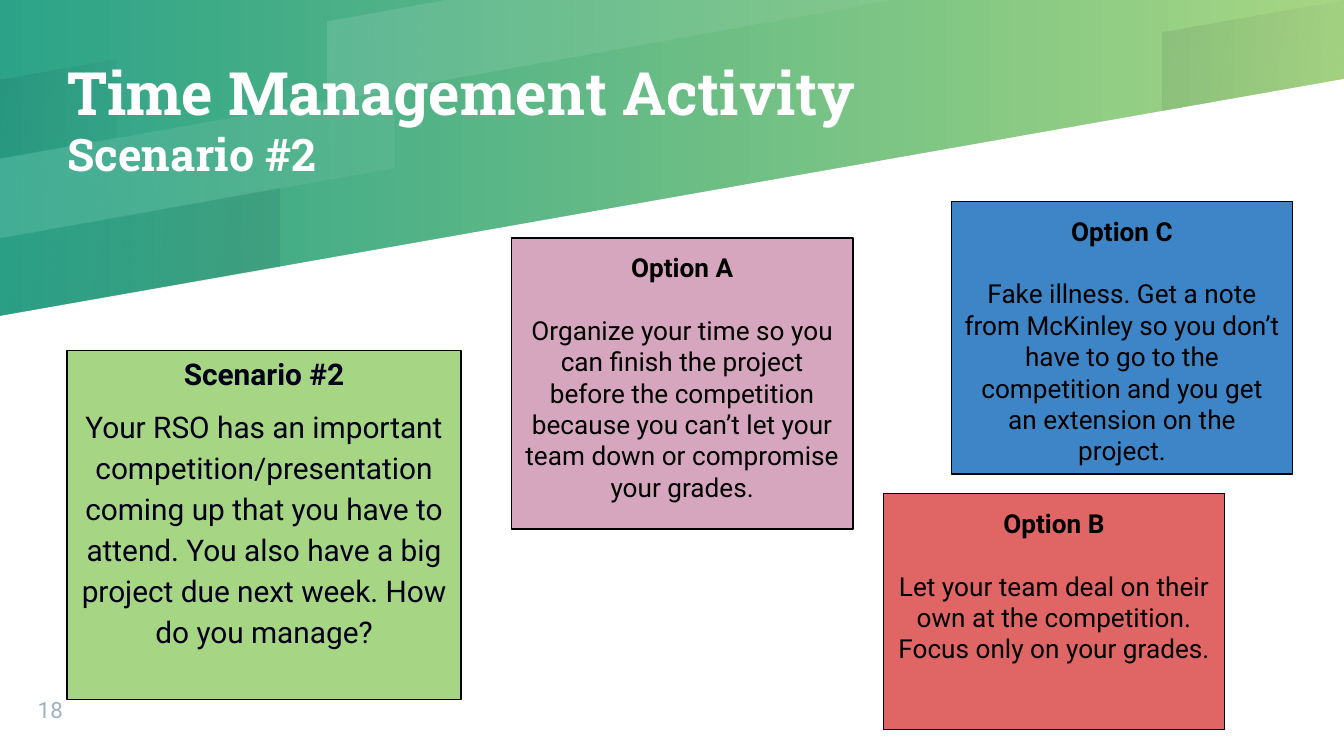
from lxml import etree
from pptx import Presentation
from pptx.dml.color import RGBColor
from pptx.enum.shapes import MSO_SHAPE
from pptx.enum.text import MSO_ANCHOR, PP_ALIGN
from pptx.oxml.ns import qn
from pptx.util import Pt

RECTANGLE = MSO_SHAPE.RECTANGLE
TOP, MIDDLE, BOTTOM = MSO_ANCHOR.TOP, MSO_ANCHOR.MIDDLE, MSO_ANCHOR.BOTTOM
LEFT, CENTER = PP_ALIGN.LEFT, PP_ALIGN.CENTER

WIDTH, HEIGHT = 720, 405
COLORS = {
    "teal": "2CA388", "lime": "A6D683", "white": "FFFFFF", "ink": "00001A",
    "black": "000000", "number": "9EB3C2",
    "pink": "D5A6BD", "red": "E06666", "blue": "3D85C6",
}

TITLE = [("Time Management Activity", 32), ("Scenario #2", 24)]
PAGE_NUMBER = "18"
SCENARIO = (
    "Scenario #2",
    "Your RSO has an important competition/presentation coming up that you have to "
    "attend. You also have a big project due next week. How do you manage?",
)
OPTIONS = [
    ("Option A",
     "Organize your time so you can finish the project before the competition because "
     "you can’t let your team down or compromise your grades.",
     "pink", (274, 127.5, 183, 156)),
    ("Option B",
     "Let your team deal on their own at the competition. Focus only on your grades.",
     "red", (473.2, 264.5, 183, 126.5)),
    ("Option C",
     "Fake illness. Get a note from McKinley so you don’t have to go to the competition "
     "and you get an extension on the project.",
     "blue", (509.6, 108, 183, 146)),
]

STEP = 42.33
RUN = 240
LEVELS = 4
BANDS = [
    (175.5, WIDTH, 3, "white", (12, 5)),
    (0, 62.5, 3, "ink", (8, 2)),
    (0, 149.5, 1, "ink", (2, 8)),
    (623, WIDTH, 1, "ink", (8, 2)),
    (0, 211.5, 2, "white", (12, 5)),
]


def rgb(name):
    return RGBColor.from_string(COLORS[name])


def slope_point(x, level):
    x = min(x, RUN * (LEVELS - level))
    return x, STEP * (LEVELS - level - x / RUN)


def add_outline(slide, points):
    corners = [(Pt(x), Pt(y)) for x, y in points]
    builder = slide.shapes.build_freeform(*corners[0])
    builder.add_line_segments(corners[1:], close=True)
    outline = builder.convert_to_shape()
    outline.shadow.inherit = False
    outline.line.fill.background()
    return outline


def add_band(slide, left, right, level, color, opacities):
    band = add_outline(slide, [
        slope_point(left, level), slope_point(left, level - 1),
        slope_point(right, level - 1), slope_point(right, level),
    ])
    band.fill.gradient()
    band.fill.gradient_angle = 350
    for stop in band.fill.gradient_stops:
        stop.color.rgb = rgb(color)
    stop_colors = band._element.spPr.iter(qn("a:srgbClr"))
    for stop_color, opacity in zip(stop_colors, opacities):
        etree.SubElement(stop_color, qn("a:alpha"), val=str(opacity * 1000))


def set_frame(frame, anchor, inset=0):
    settings = {"word_wrap": True, "vertical_anchor": anchor}
    settings.update({f"margin_{side}": Pt(inset)
                     for side in ("left", "top", "right", "bottom")})
    for key, value in settings.items():
        setattr(frame, key, value)


def write(frame, lines, color, align, spacing=None, gap=0, shadow=False):
    for index, (text, size, bold, font_name) in enumerate(lines):
        paragraph = frame.add_paragraph() if index else frame.paragraphs[0]
        layout = {"alignment": align, "line_spacing": spacing,
                  "space_before": Pt(gap if index else 0)}
        for key, value in layout.items():
            setattr(paragraph, key, value)
        run = paragraph.add_run()
        run.text = text
        run.font.color.rgb = rgb(color)
        if shadow:
            add_text_shadow(run)
        for key, value in {"size": Pt(size), "bold": bold, "name": font_name}.items():
            setattr(run.font, key, value)


def add_text_shadow(run):
    effects = etree.SubElement(run.font._element, qn("a:effectLst"))
    cast = etree.SubElement(effects, qn("a:outerShdw"), blurRad="38100",
                            dist="19050", dir="2700000", algn="tl")
    shade = etree.SubElement(cast, qn("a:srgbClr"), val=COLORS["black"])
    etree.SubElement(shade, qn("a:alpha"), val="40000")


def add_label(slide, box, anchor, lines, color, shadow=False):
    label = slide.shapes.add_textbox(*map(Pt, box))
    set_frame(label.text_frame, anchor)
    write(label.text_frame, lines, color, LEFT, shadow=shadow)


def add_card(slide, box, fill, heading, body, size, color, inset, spacing, gap):
    card = slide.shapes.add_shape(RECTANGLE, *map(Pt, box))
    card.shadow.inherit = False
    card.fill.solid()
    card.fill.fore_color.rgb = rgb(fill)
    card.line.color.rgb = rgb("black")
    card.line.width = Pt(0.75)
    set_frame(card.text_frame, TOP, inset)
    lines = [(heading, size, True, "Roboto"), (body, size, False, "Roboto")]
    write(card.text_frame, lines, color, CENTER, spacing, gap)


def main():
    deck = Presentation()
    deck.slide_width, deck.slide_height = Pt(WIDTH), Pt(HEIGHT)
    slide = deck.slides.add_slide(deck.slide_layouts[6])

    backdrop = slide.background.fill
    backdrop.gradient()
    backdrop.gradient_angle = 0
    for stop, color in zip(backdrop.gradient_stops, ("teal", "lime")):
        stop.color.rgb = rgb(color)

    page = add_outline(slide, [(0, HEIGHT), (WIDTH, HEIGHT),
                               slope_point(WIDTH, 0), slope_point(0, 0)])
    page.fill.solid()
    page.fill.fore_color.rgb = rgb("white")
    for band in BANDS:
        add_band(slide, *band)

    title_lines = [(text, size, True, "Roboto Slab") for text, size in TITLE]
    add_label(slide, (36, -8, 432, 142.5), MIDDLE, title_lines, "white", shadow=True)
    add_card(slide, (36, 187.8, 211, 187), "lime", *SCENARIO,
             size=16, color="ink", inset=0, spacing=1.15, gap=6)
    add_label(slide, (20.2, 368, 38, 19.4), BOTTOM,
              [(PAGE_NUMBER, 12, False, "Roboto")], "number")
    for heading, body, fill, box in OPTIONS:
        add_card(slide, box, fill, heading, body,
                 size=14, color="black", inset=7.2, spacing=None, gap=16.8)

    deck.save("out.pptx")


if __name__ == "__main__":
    main()
